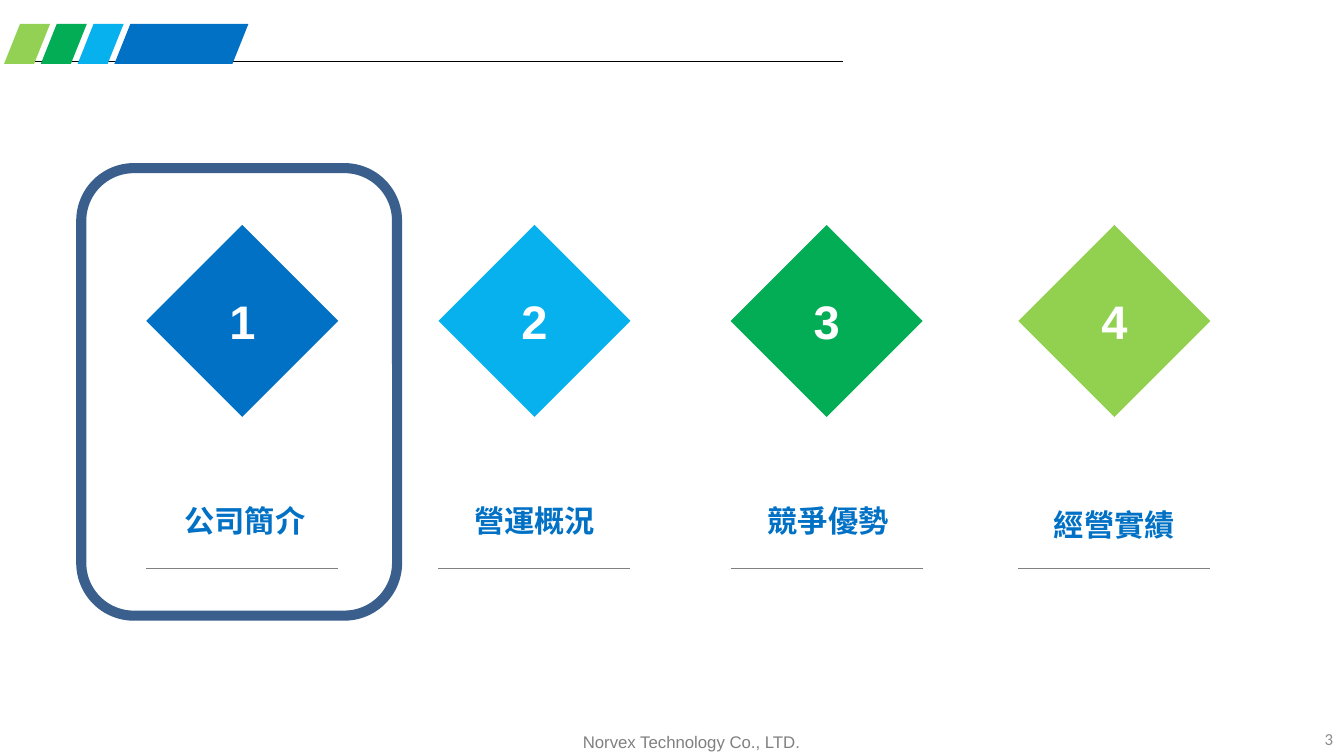
from lxml.etree import SubElement
from pptx import Presentation
from pptx.dml.color import RGBColor
from pptx.enum.shapes import MSO_CONNECTOR, MSO_SHAPE
from pptx.enum.text import MSO_ANCHOR, PP_ALIGN
from pptx.oxml.ns import qn
from pptx.util import Pt

COLORS = {
    "blue": "0071C5", "sky": "06B1EE", "green": "03AD55", "lime": "93D154",
    "lime_topic": "92D050", "frame": "3A5F8C", "rule": "808080",
    "page": "8C8C8C", "white": "FFFFFF", "black": "000000",
}
CJK_FONT = "Noto Sans CJK SC"
# number, label, colour, left of the column, label shift right and down
TOPICS = [
    ("1", "公司簡介", "blue", 87.1, 1.5, 0),
    ("2", "營運概況", "sky", 261, 0, 0),
    ("3", "競爭優勢", "green", 434.9, 0.9, 0),
    ("4", "經營實績", "lime_topic", 606.2, 0, 2.9),
]


def rgb(name):
    return RGBColor.from_string(COLORS[name])


def write(frame, text, font, size, color, align, bold=False):
    frame.text = text
    paragraph = frame.paragraphs[0]
    paragraph.alignment = align
    run = paragraph.runs[0]
    run.font.name = font
    run.font.size = Pt(size)
    run.font.bold = bold
    run.font.color.rgb = rgb(color)
    if font == CJK_FONT:
        SubElement(run.font._element, qn("a:ea"), typeface=font)
    return paragraph


def add_text(slide, box, *style, **options):
    caption = slide.shapes.add_textbox(*map(Pt, box))
    return caption.text_frame, write(caption.text_frame, *style, **options)


def add_block(slide, kind, box, fill=None):
    block = slide.shapes.add_shape(kind, *map(Pt, box))
    block.shadow.inherit = False
    if fill:
        block.fill.solid()
        block.fill.fore_color.rgb = rgb(fill)
        block.line.fill.background()
    else:
        block.fill.background()
    return block


def add_rule(slide, left, right, y, color):
    rule = slide.shapes.add_connector(
        MSO_CONNECTOR.STRAIGHT, Pt(left), Pt(y), Pt(right), Pt(y))
    rule.line.color.rgb = rgb(color)
    rule.line.width = Pt(0.75)
    SubElement(rule._element.spPr, qn("a:effectLst"))


def add_header(slide, left, top, width, height):
    add_rule(slide, left + 2.6, left + width, top + 22.4, "black")
    pitch = 21.9
    for index, color in enumerate(["lime", "green", "sky", "blue"]):
        stripe_width = 79.8 if color == "blue" else 27.4
        stripe = add_block(slide, MSO_SHAPE.PARALLELOGRAM,
                           (left + index * pitch, top, stripe_width, height), color)
        stripe.adjustments[0] = 0.4


def add_topic(slide, left, top, width, topic):
    number, label, color, _, shift_x, shift_y = topic
    diamond = add_block(slide, MSO_SHAPE.DIAMOND, (left, top, width, width), color)
    diamond.text_frame.vertical_anchor = MSO_ANCHOR.MIDDLE
    write(diamond.text_frame, number, "Arial", 28, "white", PP_ALIGN.CENTER, bold=True)
    label_width = 87.1
    label_left = left + (width - label_width) / 2 + shift_x
    frame, paragraph = add_text(
        slide, (label_left, top + 150.5 + shift_y, label_width, 36),
        label, CJK_FONT, 18, "blue", PP_ALIGN.CENTER, bold=True)
    frame.word_wrap = False
    paragraph.line_spacing = 1.5
    add_rule(slide, left, left + width, top + 204.5, "rule")


def add_highlight(slide, left, top, width, height):
    highlight = add_block(slide, MSO_SHAPE.ROUNDED_RECTANGLE, (left, top, width, height))
    highlight.line.color.rgb = rgb("frame")
    highlight.line.width = Pt(6)


def add_footer(slide, left, top, width, height):
    company, _ = add_text(slide, (left + 294.5, top + 2.9, 234, 20.2),
                          "Norvex Technology Co., LTD.", "Arial", 10, "rule",
                          PP_ALIGN.CENTER)
    company.word_wrap = True
    page, _ = add_text(slide, (left + width - 34.8, top, 35.3, height),
                       "3", "Calibri", 10, "page", PP_ALIGN.RIGHT)
    page.word_wrap = True
    page.vertical_anchor = MSO_ANCHOR.MIDDLE


def main():
    deck = Presentation()
    deck.slide_width, deck.slide_height = Pt(800), Pt(450)
    slide = deck.slides.add_slide(deck.slide_layouts[6])
    add_header(slide, 2.4, 14.2, 499.4, 23.8)
    for topic in TOPICS:
        add_topic(slide, topic[3], 133.9, 114.3, topic)
    add_highlight(slide, 48.4, 100.1, 188, 266.4)
    add_footer(slide, 0, 429.1, 800, 20.9)
    deck.save("out.pptx")


if __name__ == "__main__":
    main()
